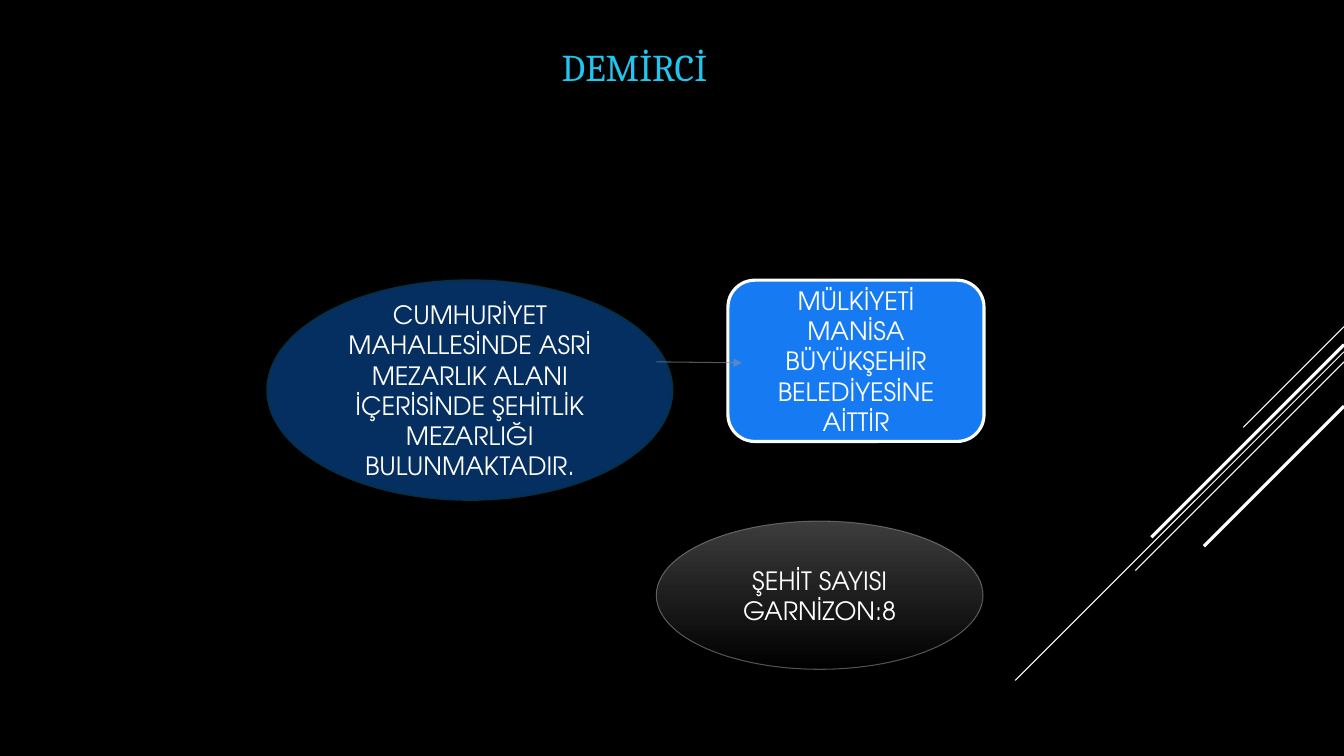
from lxml import etree
from pptx import Presentation
from pptx.dml.color import RGBColor
from pptx.enum.shapes import MSO_CONNECTOR as Connector, MSO_SHAPE as Shape
from pptx.enum.text import MSO_ANCHOR as Anchor, PP_ALIGN as Align
from pptx.oxml.ns import qn
from pptx.util import Inches, Pt

BLACK = RGBColor(0x00, 0x00, 0x00)
WHITE = RGBColor(0xFF, 0xFF, 0xFF)
CYAN = RGBColor(0x22, 0xC5, 0xED)
NAVY = RGBColor(0x05, 0x2F, 0x61)
NAVY_EDGE = RGBColor(0x04, 0x31, 0x48)
BLUE = RGBColor(0x16, 0x7B, 0xF3)
CHARCOAL = RGBColor(0x3C, 0x3C, 0x3C)
GREY_EDGE = RGBColor(0x89, 0x89, 0x89)
ARROW_GREY = RGBColor(0x89, 0x91, 0x9C)
TITLE_EDGE = RGBColor(0x50, 0x7E, 0x0E)

SLIDE_WIDTH, SLIDE_HEIGHT = 13.33, 7.5
TITLE_FONT, BODY_FONT = "Cambria", "TeX Gyre Adventor"


def set_line(shape, color, width, opacity=None):
    shape.line.color.rgb = color
    shape.line.width = Pt(width)
    if opacity is not None:
        color_element = shape.line._get_or_add_ln().find(".//" + qn("a:srgbClr"))
        etree.SubElement(color_element, qn("a:alpha"), val=str(opacity * 1000))


def add_line(slide, start, end, color, width, opacity=None):
    line = slide.shapes.add_connector(
        Connector.STRAIGHT, *(Inches(value) for value in (*start, *end)))
    set_line(line, color, width, opacity)
    etree.SubElement(line._element.spPr, qn("a:effectLst"))
    return line


def add_diagonals(slide, right):
    """Diagonal lines falling at 45 degrees from the right edge."""
    for top, length, width in ((3.24, 1, 0.75), (3.49, 3.26, 0.75), (3.59, 2.07, 0.75),
                               (3.42, 1.91, 2.25), (4.03, 1.39, 2.25)):
        add_line(slide, (right, top), (right - length, top + length), WHITE, width)


def add_title(slide, box, text):
    title = slide.shapes.title
    title.left, title.top, title.width, title.height = (Inches(value) for value in box)
    frame = title.text_frame
    frame.word_wrap = True
    frame.vertical_anchor = Anchor.BOTTOM
    frame.margin_left = Inches(2.9)
    paragraph = frame.paragraphs[0]
    paragraph.alignment = Align.LEFT
    run = paragraph.add_run()
    run.text = text
    run.font.name, run.font.size = TITLE_FONT, Pt(27)
    run.font.color.rgb = CYAN
    # Thin outline around the letters
    outline = etree.Element(qn("a:ln"), w=str(Pt(0.71)))
    fill = etree.SubElement(outline, qn("a:solidFill"))
    etree.SubElement(fill, qn("a:srgbClr"), val=str(TITLE_EDGE))
    run.font._element.insert(0, outline)


def add_bubble(slide, kind, box, texts, edge, fill):
    """Shape with centred text; two fill colours make a downward gradient."""
    bubble = slide.shapes.add_shape(kind, *(Inches(value) for value in box))
    bubble.shadow.inherit = False
    if len(fill) == 1:
        bubble.fill.solid()
        bubble.fill.fore_color.rgb = fill[0]
    else:
        bubble.fill.gradient()
        bubble.fill.gradient_angle = 270
        for stop, color in zip(bubble.fill.gradient_stops, fill):
            stop.color.rgb = color
    set_line(bubble, *edge)
    frame = bubble.text_frame
    frame.word_wrap = True
    frame.vertical_anchor = Anchor.MIDDLE
    for index, text in enumerate(texts):
        paragraph = frame.add_paragraph() if index else frame.paragraphs[0]
        paragraph.alignment = Align.CENTER
        run = paragraph.add_run()
        run.text = text
        run.font.name, run.font.size = BODY_FONT, Pt(18)
        run.font.color.rgb = WHITE


def add_diagram(slide, box):
    """Cemetery, its owner and the number of graves."""
    left, top, width, height = box
    right, bottom = left + width, top + height
    add_bubble(slide, Shape.OVAL, (left, top, 4.02, 2.18),
               ["CUMHURİYET MAHALLESİNDE ASRİ MEZARLIK ALANI İÇERİSİNDE "
                "ŞEHİTLİK MEZARLIĞI BULUNMAKTADIR."],
               (NAVY_EDGE, 1.25), [NAVY])
    add_bubble(slide, Shape.ROUNDED_RECTANGLE, (right - 2.54, top, 2.54, 1.6),
               ["MÜLKİYETİ MANİSA BÜYÜKŞEHİR BELEDİYESİNE AİTTİR"],
               (WHITE, 2.25), [BLUE])
    # Arrow from the cemetery to its owner
    arrow = add_line(slide, (left + 3.86, top + 0.81), (left + 4.71, top + 0.82),
                     ARROW_GREY, 0.75, 60)
    etree.SubElement(arrow.line._get_or_add_ln(), qn("a:tailEnd"), type="triangle")
    add_bubble(slide, Shape.OVAL, (right - 3.25, bottom - 1.47, 3.24, 1.47),
               ["ŞEHİT SAYISI", "GARNİZON:8"],
               (GREY_EDGE, 0.75, 60), [CHARCOAL, BLACK])


def main():
    presentation = Presentation()
    presentation.slide_width = Inches(SLIDE_WIDTH)
    presentation.slide_height = Inches(SLIDE_HEIGHT)
    slide = presentation.slides.add_slide(presentation.slide_layouts[5])
    slide.background.fill.solid()
    slide.background.fill.fore_color.rgb = BLACK
    add_diagonals(slide, SLIDE_WIDTH)
    add_title(slide, (2.67, 0.31, 8.58, 0.62), "DEMİRCİ")
    add_diagram(slide, (2.65, 2.78, 7.11, 3.86))
    presentation.save("out.pptx")


if __name__ == "__main__":
    main()
